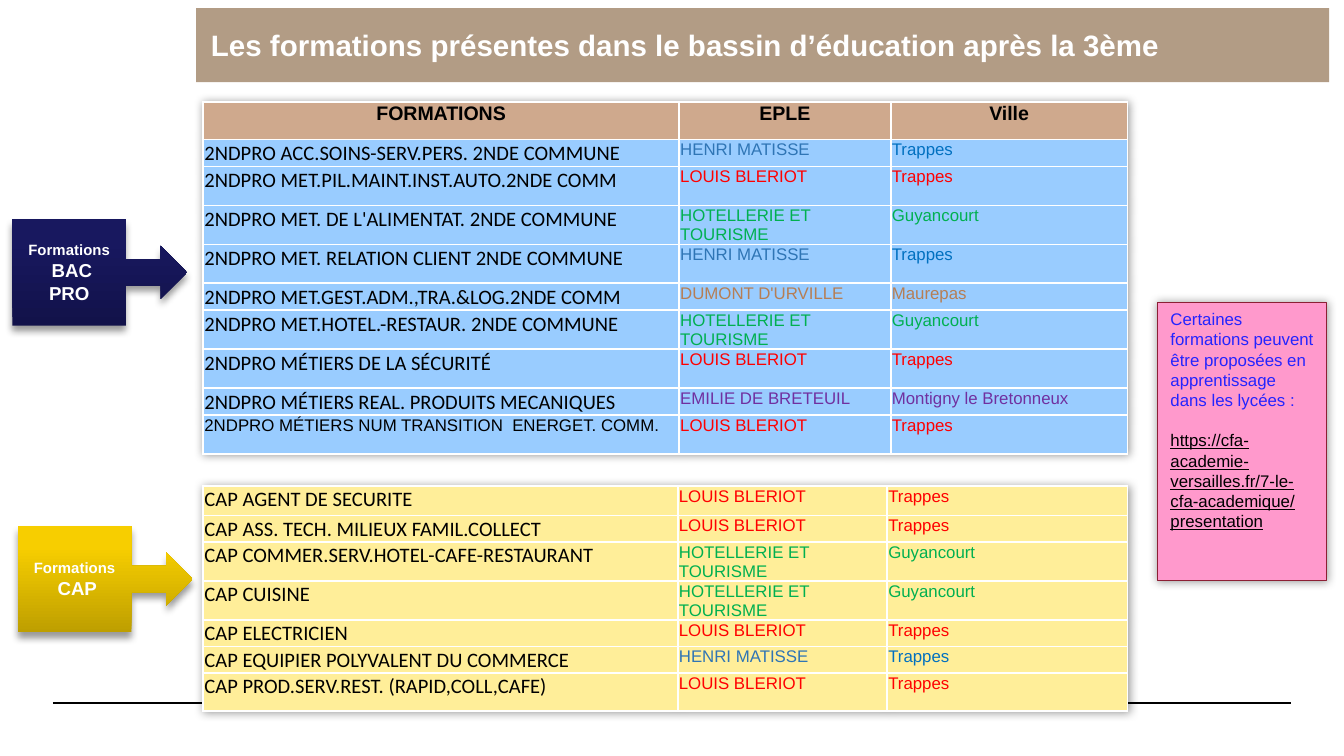
from typing import NamedTuple

from pptx import Presentation
from pptx.dml.color import RGBColor
from pptx.enum.shapes import MSO_CONNECTOR, MSO_SHAPE
from pptx.enum.text import MSO_ANCHOR, MSO_AUTO_SIZE, PP_ALIGN
from pptx.oxml import parse_xml
from pptx.oxml.ns import nsdecls, qn
from pptx.util import Pt

COLORS = {
    "black": "000000", "white": "FFFFFF", "banner": "B29C85",
    "header": "CFA98D", "bac": "99CCFF", "cap": "FFEE99",
    "blue": "2F75B5", "city_blue": "0070C0", "red": "FF0000",
    "green": "00B050", "brown": "B67E54", "purple": "7030A0",
    "note": "FF99CC", "note_line": "8C1F34", "note_text": "2424FF",
}


class School(NamedTuple):
    name: str
    city: str
    color: str
    city_color: str


class Course(NamedTuple):
    label: str
    school: School
    height: float
    size: float = 11
    font: str = "Calibri"


class Grid(NamedTuple):
    top: float
    widths: tuple[float, ...]
    fill: str
    courses: list[Course]
    headings: tuple[str, ...] = ()


class Callout(NamedTuple):
    left: float
    top: float
    label: str
    stops: tuple[tuple[int, str], ...]


MATISSE = School("HENRI MATISSE", "Trappes", "blue", "city_blue")
BLERIOT = School("LOUIS BLERIOT", "Trappes", "red", "red")
HOTEL = School("HOTELLERIE ET TOURISME", "Guyancourt", "green", "green")
DUMONT = School("DUMONT D'URVILLE", "Maurepas", "brown", "brown")
BRETEUIL = School("EMILIE DE BRETEUIL", "Montigny le Bretonneux", "purple", "purple")

HEADER_H, TALL, SHORT, CAP_SHORT = 20, 20.9, 14.4, 11.5

GRIDS = [
    Grid(54.7, (254.9, 113.4, 126.9), "bac", [
        Course("2NDPRO ACC.SOINS-SERV.PERS. 2NDE COMMUNE", MATISSE, SHORT),
        Course("2NDPRO MET.PIL.MAINT.INST.AUTO.2NDE COMM", BLERIOT, TALL),
        Course("2NDPRO MET. DE L'ALIMENTAT. 2NDE COMMUNE", HOTEL, TALL),
        Course("2NDPRO MET. RELATION CLIENT 2NDE COMMUNE", MATISSE, TALL),
        Course("2NDPRO MET.GEST.ADM.,TRA.&LOG.2NDE COMM", DUMONT, SHORT),
        Course("2NDPRO MET.HOTEL.-RESTAUR. 2NDE COMMUNE", HOTEL, TALL),
        Course("2NDPRO MÉTIERS DE LA SÉCURITÉ", BLERIOT, TALL),
        Course("2NDPRO MÉTIERS REAL. PRODUITS MECANIQUES", BRETEUIL, SHORT),
        Course("2NDPRO MÉTIERS NUM TRANSITION  ENERGET. COMM.", BLERIOT, TALL, 9, "Arial"),
    ], ("FORMATIONS", "EPLE", "Ville")),
    Grid(260.4, (254.2, 112.2, 128.8), "cap", [
        Course("CAP AGENT DE SECURITE", BLERIOT, 15.8),
        Course("CAP ASS. TECH. MILIEUX FAMIL.COLLECT", BLERIOT, CAP_SHORT),
        Course("CAP COMMER.SERV.HOTEL-CAFE-RESTAURANT", HOTEL, TALL),
        Course("CAP CUISINE", HOTEL, TALL),
        Course("CAP ELECTRICIEN", BLERIOT, CAP_SHORT),
        Course("CAP EQUIPIER POLYVALENT DU COMMERCE", MATISSE, CAP_SHORT),
        Course("CAP PROD.SERV.REST. (RAPID,COLL,CAFE)", BLERIOT, 20.2),
    ]),
]

CALLOUTS = [
    Callout(6.7, 117.5, " BAC PRO", ((0, "12124A"), (80, "18185F"), (100, "161661"))),
    Callout(9.6, 281.8, " CAP", ((0, "BE9F00"), (80, "F7CE00"), (100, "F8CF00"))),
]


def rgb(name: str) -> RGBColor:
    return RGBColor.from_string(COLORS[name])


def add_run(p, text: str, size: float, color: str, bold: bool = False,
            font: str = "Arial"):
    r = p.add_run()
    r.text = text
    r.font.name, r.font.size, r.font.bold = font, Pt(size), bold
    r.font.color.rgb = rgb(color)
    return r


def shadow_xml(blur: float, dist: float):
    return parse_xml(
        f'<a:effectLst {nsdecls("a")}><a:outerShdw blurRad="{Pt(blur)}" '
        f'dist="{Pt(dist)}" dir="5400000" rotWithShape="0"><a:srgbClr val="000000">'
        '<a:alpha val="40000"/></a:srgbClr></a:outerShdw></a:effectLst>')


def add_shadow(sp, blur: float, dist: float) -> None:
    sp.shadow.inherit = False
    effects = sp._element.spPr.find(qn("a:effectLst"))
    effects.getparent().replace(effects, shadow_xml(blur, dist))


def style_cell(cell, fill: str) -> None:
    cell.margin_left = cell.margin_right = cell.margin_top = Pt(0.6)
    cell.margin_bottom = 0
    cell.fill.solid()
    cell.fill.fore_color.rgb = rgb(fill)
    tc_pr = cell._tc.get_or_add_tcPr()
    for i, side in enumerate("LRTB"):
        tc_pr.insert(i, parse_xml(
            f'<a:ln{side} {nsdecls("a")} w="{Pt(1)}"><a:solidFill>'
            f'<a:srgbClr val="{COLORS["white"]}"/></a:solidFill></a:ln{side}>'))


def draw_grid(slide, grid: Grid) -> None:
    heights = [HEADER_H] * bool(grid.headings) + [c.height for c in grid.courses]
    table = slide.shapes.add_table(
        len(heights), len(grid.widths), Pt(108.9), Pt(grid.top),
        Pt(sum(grid.widths)), Pt(sum(heights))).table
    table.first_row = table.horz_banding = False
    table._tbl.tblPr.insert(0, shadow_xml(5, 0))
    for column, width in zip(table.columns, grid.widths):
        column.width = Pt(width)
    for row, height in zip(table.rows, heights):
        row.height = Pt(height)

    rows = list(table.rows)
    if grid.headings:
        for cell, heading in zip(rows.pop(0).cells, grid.headings):
            style_cell(cell, "header")
            p = cell.text_frame.paragraphs[0]
            p.alignment = PP_ALIGN.CENTER
            add_run(p, heading, 10.5, "black", bold=True)
    for row, course in zip(rows, grid.courses):
        school = course.school
        texts = [(course.label, course.size, "black", False, course.font),
                 (school.name, 9, school.color),
                 (school.city, 9, school.city_color)]
        for cell, text in zip(row.cells, texts):
            style_cell(cell, grid.fill)
            add_run(cell.text_frame.paragraphs[0], *text)


def draw_callout(slide, callout: Callout) -> None:
    sp = slide.shapes.add_shape(MSO_SHAPE.RIGHT_ARROW_CALLOUT, Pt(callout.left),
                                Pt(callout.top), Pt(93.6), Pt(56.9))
    stops = "".join(f'<a:gs pos="{pos * 1000}"><a:srgbClr val="{color}"/></a:gs>'
                    for pos, color in callout.stops)
    sp._element.spPr.find(qn("a:prstGeom")).addnext(parse_xml(
        f'<a:gradFill {nsdecls("a")} rotWithShape="1"><a:gsLst>{stops}</a:gsLst>'
        '<a:lin ang="16200000" scaled="0"/></a:gradFill>'))
    sp.line.fill.background()
    add_shadow(sp, 4, 3)
    tf = sp.text_frame
    tf.word_wrap, tf.vertical_anchor = True, MSO_ANCHOR.MIDDLE
    p = tf.paragraphs[0]
    p.alignment = PP_ALIGN.CENTER
    add_run(p, "Formations", 8, "white", bold=True)
    p.add_line_break()
    add_run(p, callout.label, 10, "white", bold=True)


def draw_title(slide) -> None:
    sp = slide.shapes.title
    sp.left, sp.top, sp.width, sp.height = Pt(105.1), Pt(4.4), Pt(607), Pt(39.6)
    sp._element.spPr.append(parse_xml(
        f'<a:prstGeom {nsdecls("a")} prst="homePlate"><a:avLst>'
        '<a:gd name="adj" fmla="val 41500"/></a:avLst></a:prstGeom>'))
    sp.fill.solid()
    sp.fill.fore_color.rgb = rgb("banner")
    tf = sp.text_frame
    tf.word_wrap, tf.auto_size = True, MSO_AUTO_SIZE.NONE
    tf.vertical_anchor = MSO_ANCHOR.MIDDLE
    tf.margin_left = tf.margin_right = Pt(7.9)
    p = tf.paragraphs[0]
    p.alignment = PP_ALIGN.JUSTIFY
    add_run(p, "Les formations présentes dans le bassin d’éducation après la 3ème",
            15.8, "white", bold=True)


def draw_note(slide) -> None:
    sp = slide.shapes.add_shape(MSO_SHAPE.RECTANGLE, Pt(620), Pt(162), Pt(90.7), Pt(149))
    sp.fill.solid()
    sp.fill.fore_color.rgb = rgb("note")
    sp.line.color.rgb, sp.line.width = rgb("note_line"), Pt(0.75)
    add_shadow(sp, 5, 0)
    tf = sp.text_frame
    tf.word_wrap, tf.vertical_anchor = True, MSO_ANCHOR.TOP
    p = tf.paragraphs[0]
    p.alignment = PP_ALIGN.LEFT
    add_run(p, "Certaines formations peuvent être proposées en apprentissage "
               "dans les lycées :", 9, "note_text")
    p = tf.add_paragraph()
    p.alignment, p.space_before = PP_ALIGN.LEFT, Pt(10.8)
    r = add_run(p, "https://cfa-academie-versailles.fr/7-le-cfa-academique/presentation",
                9, "black")
    r.font.underline = True


def main() -> None:
    prs = Presentation()
    prs.slide_width, prs.slide_height = Pt(720), Pt(405)
    slide = prs.slides.add_slide(prs.slide_layouts[5])
    draw_title(slide)

    # Footer rule, behind the tables
    rule = slide.shapes.add_connector(MSO_CONNECTOR.STRAIGHT, Pt(28.3), Pt(376.6),
                                      Pt(691.7), Pt(376.6))
    rule.line.color.rgb, rule.line.width = rgb("black"), Pt(0.8)
    rule._element.spPr.append(parse_xml(f'<a:effectLst {nsdecls("a")}/>'))

    # Each course table with its callout
    for grid, callout in zip(GRIDS, CALLOUTS):
        draw_grid(slide, grid)
        draw_callout(slide, callout)
    draw_note(slide)
    prs.save("out.pptx")


if __name__ == "__main__":
    main()
